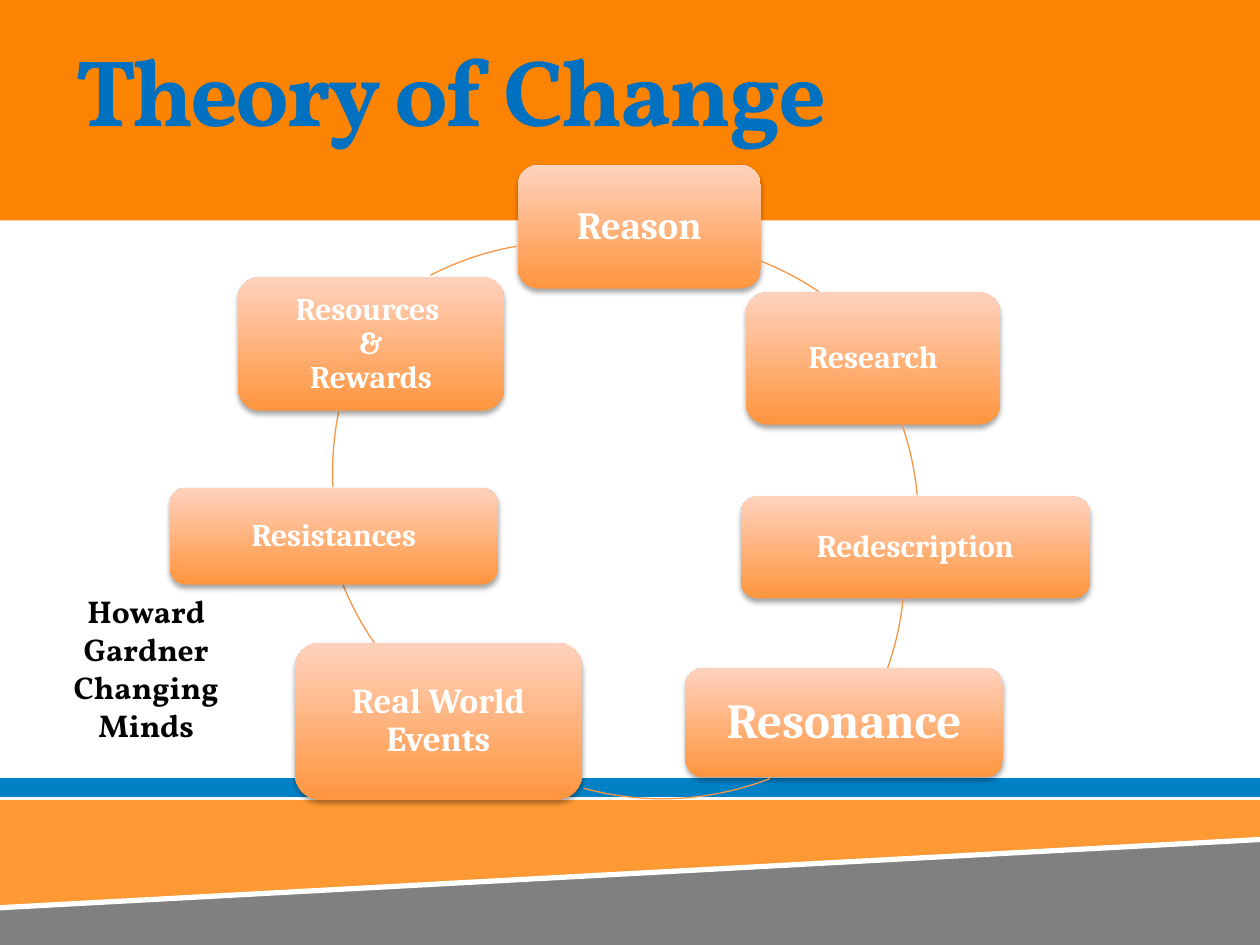
from dataclasses import dataclass

from lxml import etree
from pptx import Presentation
from pptx.dml.color import RGBColor
from pptx.enum.shapes import MSO_CONNECTOR, MSO_SHAPE
from pptx.enum.text import MSO_ANCHOR, PP_ALIGN
from pptx.oxml.ns import qn
from pptx.util import Inches, Pt

RECT, ROUND, ARC = MSO_SHAPE.RECTANGLE, MSO_SHAPE.ROUNDED_RECTANGLE, MSO_SHAPE.ARC
LINE = MSO_CONNECTOR.STRAIGHT
MIDDLE, TOP = MSO_ANCHOR.MIDDLE, MSO_ANCHOR.TOP
LEFT, CENTER = PP_ALIGN.LEFT, PP_ALIGN.CENTER


@dataclass(frozen=True)
class Theme:
    head: str = "FD8402"
    band: str = "FF9933"
    slope: str = "808080"
    stripe: str = "0081C6"
    title: str = "0070C0"
    low: str = "FF953E"
    high: str = "FFD2BD"
    arc: str = "F79646"
    white: str = "FFFFFF"
    black: str = "000000"
    serif: str = "Vollkorn"
    label: str = "Cambria"
    title_size: int = 54
    note_size: int = 18


THEME = Theme()
RING = 4.73  # diameter of the circle each arc is cut from

# text, type size, text margin, box, then the next arc: left, top, start and end degrees
STEPS = [
    ("Reason", 22, 0.09, (4.11, 1.31, 1.93, 0.98), (2.81, 1.91, 291.5, 304)),
    ("Research", 18, 0.07, (5.92, 2.32, 2.02, 1.05), (2.56, 1.78, 341.2, 354.8)),
    ("Redescription", 18, 0.07, (5.88, 3.94, 2.77, 0.81), (2.45, 2.15, 5.7, 19.4)),
    ("Resonance", 28, 0.12, (5.44, 5.3, 2.52, 0.87), (2.89, 1.61, 68.8, 105.3)),
    ("Real World\vEvents", 20, 0.08, (2.34, 5.1, 2.28, 1.25), (2.55, 1.39, 145.3, 158)),
    ("Resistances", 18, 0.07, (1.35, 3.87, 2.6, 0.77), (2.64, 1.38, 177, 191.6)),
    ("Resources \v&\vRewards", 18, 0.07, (1.89, 2.2, 2.11, 1.06), (2.14, 1.92, 242.6, 260.1)),
]


def rgb(code):
    return RGBColor.from_string(code)


def assign(item, values):
    for name, value in values.items():
        setattr(item, name, value)


def stroke(item, color, width):
    item.line.color.rgb = rgb(color)
    item.line.width = Pt(width)


def cast(shape, alpha, blur, dist):
    """Give the shape a black shadow that falls straight down."""
    shape.shadow.inherit = False
    effects = shape._element.spPr.find(qn("a:effectLst"))
    outer = etree.SubElement(effects, qn("a:outerShdw"), blurRad=str(Pt(blur)),
                             dist=str(Pt(dist)), dir="5400000", rotWithShape="0")
    color = etree.SubElement(outer, qn("a:srgbClr"), val=THEME.black)
    etree.SubElement(color, qn("a:alpha"), val=str(alpha * 1000))


def add_shape(slide, kind, box):
    shape = slide.shapes.add_shape(kind, *map(Inches, box))
    shape.shadow.inherit = False
    return shape


def add_band(slide, box, color, edge=None):
    band = add_shape(slide, RECT, box)
    band.fill.solid()
    band.fill.fore_color.rgb = rgb(color)
    if edge:
        stroke(band, edge, 3)
    else:
        band.line.fill.background()
    return band


def add_stripe(slide):
    ends = map(Inches, (-0.08, 6.25, 10.5, 6.25))
    stripe = slide.shapes.add_connector(LINE, *ends)
    stroke(stripe, THEME.stripe, 10.5)
    etree.SubElement(stripe._element.spPr, qn("a:effectLst"))


def write(frame, lines, font, anchor=MIDDLE, align=CENTER, space=1.0):
    assign(frame, {"word_wrap": True, "vertical_anchor": anchor})
    frame.text = "\n".join(lines)
    for para in frame.paragraphs:
        assign(para, {"alignment": align, "line_spacing": space})
        for run in para.runs:
            assign(run.font, {key: font[key] for key in ("name", "size", "bold")})
            run.font.color.rgb = rgb(font["color"])


def face(name, size, color):
    return {"name": name, "size": Pt(size), "bold": True, "color": color}


def add_text(slide, box, lines, font, **format):
    frame = slide.shapes.add_textbox(*map(Inches, box)).text_frame
    write(frame, lines, font, **format)
    return frame


def add_step(slide, text, size, margin, box):
    step = add_shape(slide, ROUND, box)
    step.fill.gradient()
    step.fill.gradient_angle = 90
    for stop, color in zip(step.fill.gradient_stops, (THEME.low, THEME.high)):
        stop.color.rgb = rgb(color)
    step.line.fill.background()
    cast(step, 35, 3.1, 1.8)
    sides = ("left", "top", "right", "bottom")
    assign(step.text_frame, {f"margin_{side}": Inches(margin) for side in sides})
    write(step.text_frame, [text], face(THEME.label, size, THEME.white), space=0.9)


def add_arc(slide, left, top, start, end):
    arc = add_shape(slide, ARC, (left, top, RING, RING))
    for index, angle in enumerate((start, end)):
        arc.adjustments[index] = angle * 0.6  # 60000 units to a degree, over 100000
    arc.fill.background()
    stroke(arc, THEME.arc, 0.75)


def add_title(slide):
    font = face(THEME.serif, THEME.title_size, THEME.title)
    frame = add_text(slide, (0.5, 0.08, 9, 1.25), ["Theory of Change"], font, align=LEFT)
    frame.paragraphs[0].runs[0].font._element.set("spc", "-150")


def main():
    deck = Presentation()
    assign(deck, {"slide_width": Inches(10), "slide_height": Inches(7.5)})
    slide = deck.slides.add_slide(deck.slide_layouts[6])

    add_band(slide, (-0.17, -0.12, 10.25, 1.87), THEME.head)
    add_band(slide, (-0.17, 6.33, 10.78, 1.83), THEME.band, THEME.white)
    slope = add_band(slide, (-1.12, 6.93, 12.46, 3.38), THEME.slope, THEME.white)
    slope.rotation = 356.9
    cast(slope, 38, 3.1, 1.6)
    add_stripe(slide)
    add_title(slide)

    for text, size, margin, box, arc in STEPS:
        add_step(slide, text, size, margin, box)
        add_arc(slide, *arc)

    add_text(slide, (0.2, 4.65, 1.92, 1.31), ["Howard Gardner", "Changing Minds"],
             face(THEME.serif, THEME.note_size, THEME.black), anchor=TOP)
    deck.save("out.pptx")


if __name__ == "__main__":
    main()
